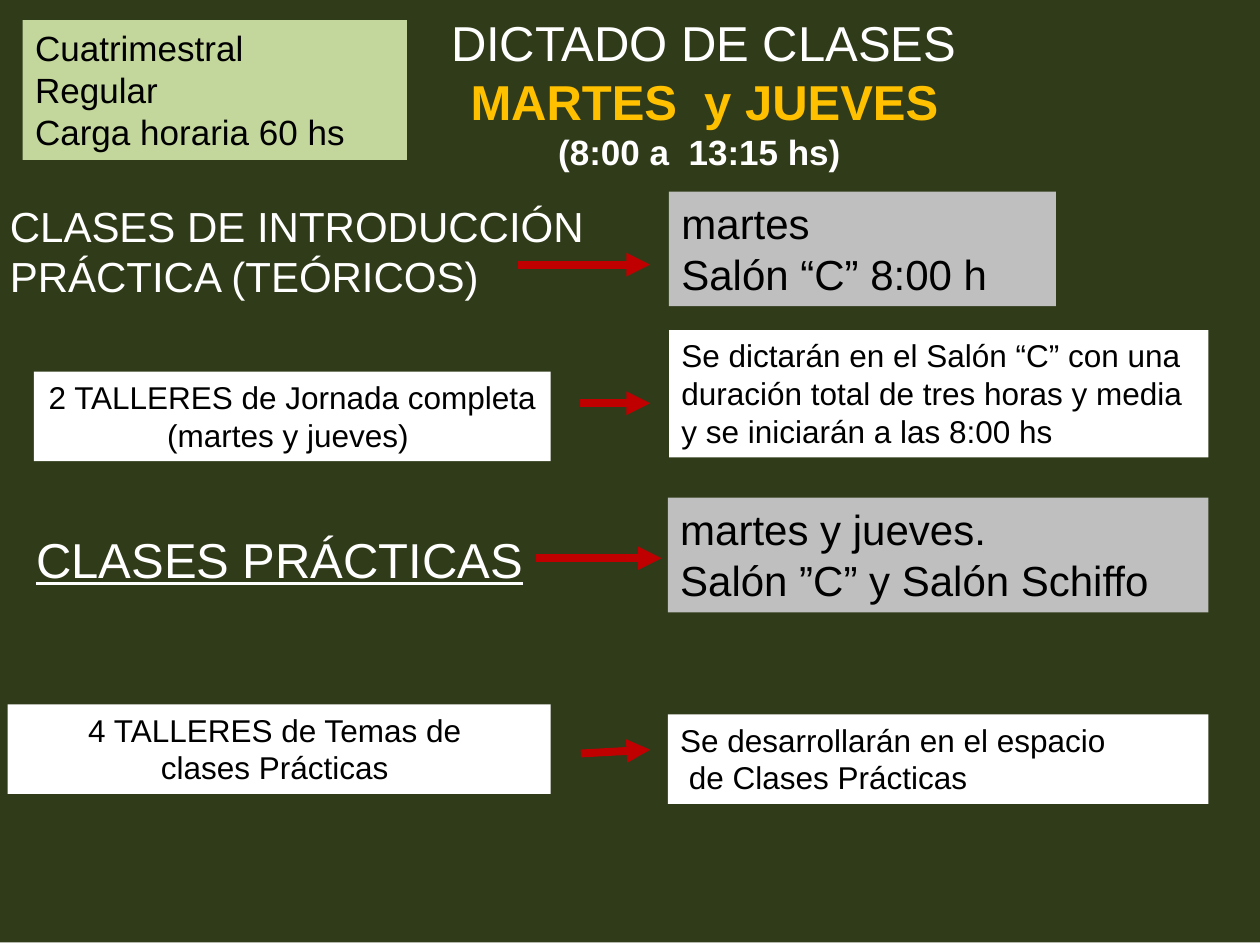
from lxml.etree import SubElement
from pptx import Presentation
from pptx.dml.color import RGBColor as RGB
from pptx.enum.shapes import MSO_CONNECTOR as Link, MSO_SHAPE as Shape
from pptx.enum.text import MSO_ANCHOR as Anchor, MSO_AUTO_SIZE as Fit, PP_ALIGN as Align
from pptx.oxml.ns import qn
from pptx.util import Inches, Pt

OLIVE = RGB(0x30, 0x3B, 0x19)
GREEN = RGB(0xC3, 0xD6, 0x9B)
GREY = RGB(0xBF, 0xBF, 0xBF)
WHITE = RGB(0xFF, 0xFF, 0xFF)
BLACK = RGB(0, 0, 0)
AMBER = RGB(0xFF, 0xC0, 0x00)
RED = RGB(0xC0, 0x00, 0x00)


class Board:
    font = "Arial"

    def __init__(self, deck):
        self.slide = deck.slides.add_slide(deck.slide_layouts[5])
        self.shapes = self.slide.shapes

    def fill_text(self, frame, text, size, color, align=Align.LEFT):
        frame.text = text
        frame.word_wrap = True
        frame.auto_size = Fit.NONE
        frame.vertical_anchor = Anchor.TOP
        for par in frame.paragraphs:
            par.alignment = align
            for run in par.runs:
                self.style(run, size, color)

    def style(self, run, size, color):
        run.font.name = self.font
        run.font.size = Pt(size)
        run.font.color.rgb = color

    def title(self, place, text, size):
        title = self.shapes.title
        title.left, title.top, title.width, title.height = map(Inches, place)
        self.fill_text(title.text_frame, text, size, WHITE)
        # Bring the title in front of the backdrop
        self.shapes.element.append(title.element)

    def label(self, place, text, size, color=WHITE, align=Align.LEFT):
        box = self.shapes.add_textbox(*map(Inches, place))
        self.fill_text(box.text_frame, text, size, color, align)
        return box.text_frame.paragraphs[0]

    def panel(self, place, fill, text="", size=18, align=Align.LEFT):
        box = self.shapes.add_shape(Shape.RECTANGLE, *map(Inches, place))
        box.shadow.inherit = False
        box.fill.solid()
        box.fill.fore_color.rgb = fill
        box.line.fill.background()
        if text:
            self.fill_text(box.text_frame, text, size, BLACK, align)

    def arrow(self, *ends):
        link = self.shapes.add_connector(Link.STRAIGHT, *map(Inches, ends))
        link.line.color.rgb = RED
        link.line.width = Pt(4.5)
        line = link.element.spPr.find(qn("a:ln"))
        SubElement(line, qn("a:tailEnd"), type="triangle")
        SubElement(link.element.spPr, qn("a:effectLst"))


def main():
    deck = Presentation()
    deck.slide_width, deck.slide_height = Inches(10), Inches(7.5)
    board = Board(deck)

    # Backdrop and heading
    board.panel((0, -0.02, 10, 7.5), OLIVE)
    board.title((3.48, 0.05, 4.72, 0.57), "DICTADO DE CLASES", 28)
    days = board.label((3.58, 0.52, 4.02, 0.91), "MARTES  y JUEVES ", 28,
                       AMBER, Align.CENTER)
    hours = days.add_run()
    hours.text = "(8:00 a  13:15 hs) "
    board.style(hours, 20, WHITE)
    for run in days.runs:
        run.font.bold = True

    # Course summary
    board.panel((0.18, 0.16, 3.05, 1.11), GREEN,
                "Cuatrimestral\nRegular\nCarga horaria 60 hs", 20)

    # Class types
    board.label((-0.02, 1.54, 5.04, 0.91),
                "CLASES DE INTRODUCCIÓN PRÁCTICA (TEÓRICOS)", 24)
    lab = board.label((0.19, 4.15, 4.17, 0.57), "CLASES PRÁCTICAS", 28)
    lab.runs[0].font.underline = True

    # Workshops
    board.panel((0.27, 2.95, 4.1, 0.71), WHITE,
                "2 TALLERES de Jornada completa\n(martes y jueves) ",
                align=Align.CENTER)
    board.panel((0.06, 5.59, 4.31, 0.71), WHITE,
                "4 TALLERES de Temas de \nclases Prácticas ",
                align=Align.CENTER)

    # Times and rooms
    board.panel((5.31, 1.52, 3.07, 0.91), GREY,
                "martes \nSalón “C” 8:00 h ", 24, Align.JUSTIFY)
    board.panel((5.31, 2.62, 4.28, 1.01), WHITE,
                "Se dictarán en el Salón “C” con una duración total de "
                "tres horas y media y se iniciarán a las 8:00 hs")
    board.panel((5.3, 3.95, 4.29, 0.91), GREY,
                "martes y jueves.\nSalón ”C” y Salón Schiffo ", 24, Align.JUSTIFY)
    board.panel((5.3, 5.67, 4.29, 0.71), WHITE,
                "Se desarrollarán en el espacio\n de Clases Prácticas")

    # Arrows from each class to its details
    board.arrow(4.11, 2.1, 5.16, 2.1)
    board.arrow(4.6, 3.2, 5.16, 3.2)
    board.arrow(4.25, 4.43, 5.25, 4.43)
    board.arrow(4.61, 5.98, 5.16, 5.95)

    deck.save("out.pptx")


if __name__ == "__main__":
    main()
